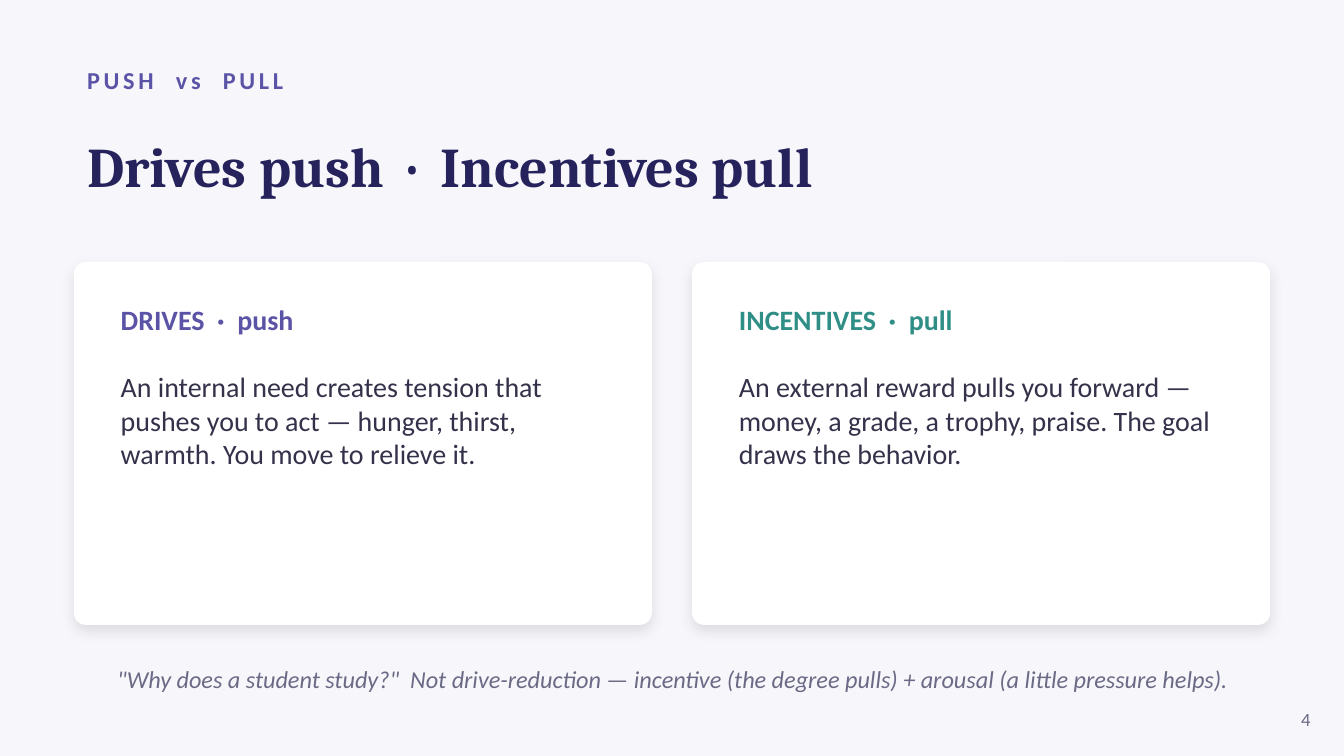
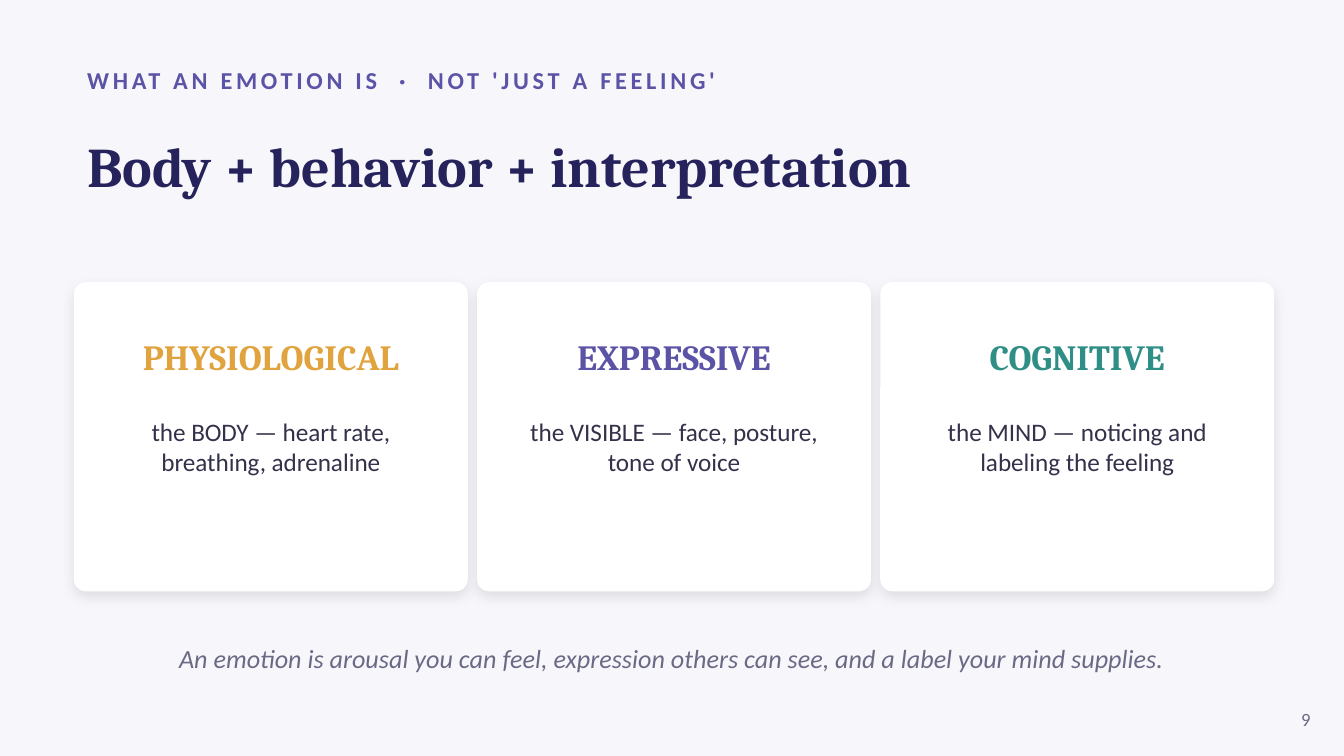
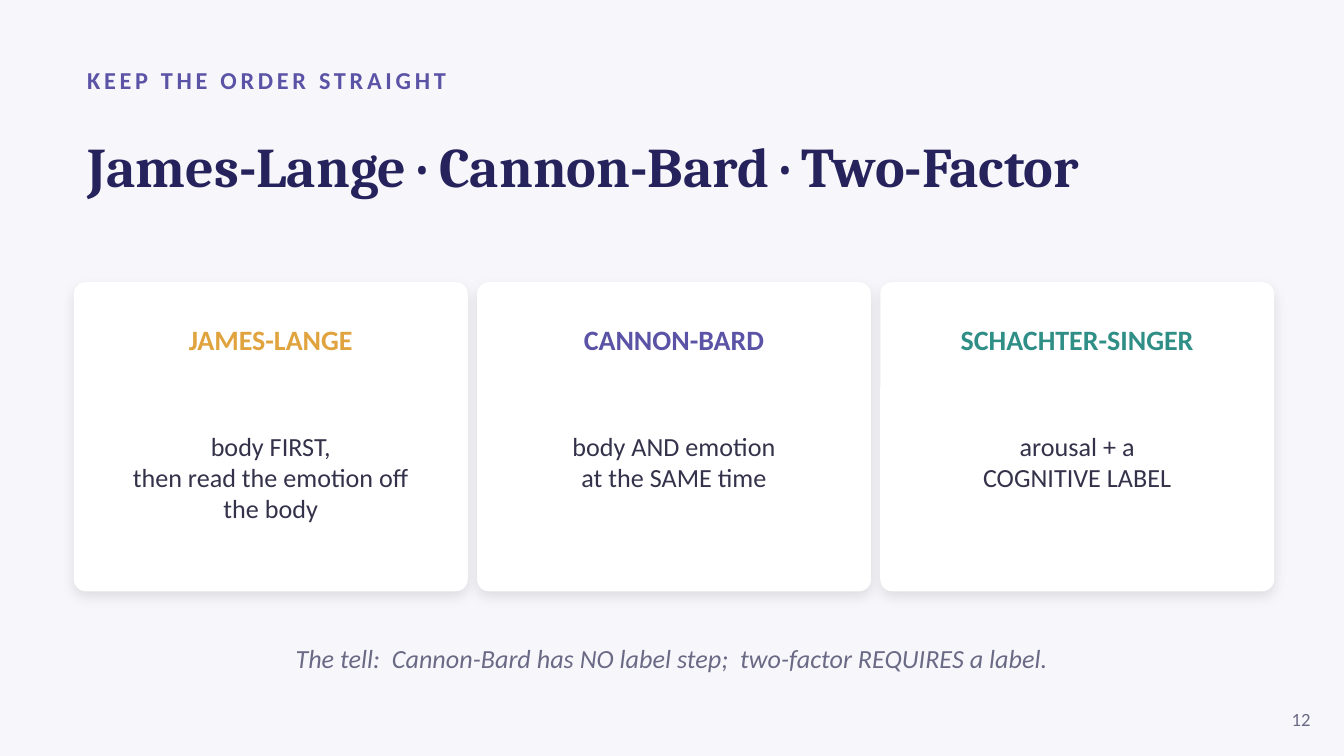
from dataclasses import dataclass

from lxml import etree
from pptx import Presentation
from pptx.dml.color import RGBColor
from pptx.enum.shapes import MSO_SHAPE
from pptx.enum.text import MSO_ANCHOR, MSO_AUTO_SIZE, PP_ALIGN
from pptx.oxml.ns import qn
from pptx.util import Pt

LEFT, CENTER, RIGHT = PP_ALIGN.LEFT, PP_ALIGN.CENTER, PP_ALIGN.RIGHT
TOP, MIDDLE = MSO_ANCHOR.TOP, MSO_ANCHOR.MIDDLE
NO_AUTOFIT = MSO_AUTO_SIZE.NONE
ROUNDED = MSO_SHAPE.ROUNDED_RECTANGLE
TITLE_ONLY = 5


@dataclass
class Style:
    size: float
    font: str = "Calibri"
    bold: bool = False
    italic: bool = False
    tracking: float = 0
    space_after: float = 0


class Theme:
    paper, white, black = "F7F7FB", "FFFFFF", "000000"
    navy, ink, muted = "26235C", "33324A", "6B6A86"
    violet, teal, amber = "5B53A6", "2F8F86", "E0A33E"
    kicker = Style(13, bold=True, tracking=2)
    title = Style(30, "Cambria", bold=True)
    spaced_heading = Style(15, bold=True, space_after=18)
    heading = Style(15, bold=True)
    serif_heading = Style(19, "Cambria", bold=True)
    large_body, body, small_body = Style(15), Style(14), Style(13.5)
    takeaway, small_takeaway = Style(14, italic=True), Style(13, italic=True)
    number = Style(10)
    margin, text_width, corner = 39.6, 640.8, 6.4


def write(box, place, lines, align=LEFT, anchor=MIDDLE):
    """Place a box and fill it with lines of (text, style, colour)."""
    box.left, box.top, box.width, box.height = [Pt(length) for length in place]
    frame = box.text_frame
    frame.word_wrap = True
    frame.auto_size = NO_AUTOFIT
    frame.vertical_anchor = anchor
    for index, (text, style, colour) in enumerate(lines):
        para = frame.add_paragraph() if index else frame.paragraphs[0]
        para.alignment = align
        para.space_after = Pt(style.space_after)
        span = para.add_run()
        span.text = text
        span.font.name = style.font
        span.font.size = Pt(style.size)
        span.font.bold = style.bold
        span.font.italic = style.italic
        span.font.color.rgb = RGBColor.from_string(colour)
        if style.tracking:
            span.font._element.set("spc", str(style.tracking * 100))


def add_card(page, left, top, width, height):
    card = page.shapes.add_shape(ROUNDED, Pt(left), Pt(top), Pt(width), Pt(height))
    card.adjustments[0] = Theme.corner / height
    card.fill.solid()
    card.fill.fore_color.rgb = RGBColor.from_string(Theme.white)
    card.line.fill.background()
    card.shadow.inherit = False
    effects = card._element.spPr.find(qn("a:effectLst"))
    shadow = etree.SubElement(effects, qn("a:outerShdw"), blurRad=str(Pt(7)),
                              dist=str(Pt(3)), dir="5400000", algn="bl", rotWithShape="0")
    colour = etree.SubElement(shadow, qn("a:srgbClr"), val=Theme.black)
    etree.SubElement(colour, qn("a:alpha"), val="10000")


# Card grids: top, width, height, step from card to card
PAIR = (140.4, 309.6, 194.4, 331.2)
TRIO = (151.2, 211, 165.6, 216)

# Text blocks in a card: side inset, top, height, alignment, anchor.
# Each card lists its lines block by block.
SLIDES = [
    {
        "kicker": "PUSH  vs  PULL",
        "title": "Drives push  ·  Incentives pull",
        "grid": PAIR,
        "blocks": [(18, 158.4, 165.6, LEFT, TOP)],
        "cards": [
            [[("DRIVES  ·  push", Theme.spaced_heading, Theme.violet),
              ("An internal need creates tension that pushes you to act — hunger, thirst, "
               "warmth. You move to relieve it.", Theme.large_body, Theme.ink)]],
            [[("INCENTIVES  ·  pull", Theme.spaced_heading, Theme.teal),
              ("An external reward pulls you forward — money, a grade, a trophy, praise. "
               "The goal draws the behavior.", Theme.large_body, Theme.ink)]],
        ],
        "takeaway": ("\"Why does a student study?\"  Not drive-reduction — incentive (the degree "
                     "pulls) + arousal (a little pressure helps).",
                     Theme.small_takeaway, Theme.muted),
        "takeaway_top": 349.2,
        "number": "4",
    },
    {
        "kicker": "WHAT AN EMOTION IS  ·  NOT 'JUST A FEELING'",
        "title": "Body + behavior + interpretation",
        "grid": TRIO,
        "blocks": [(0, 172.8, 36, CENTER, MIDDLE), (14.4, 219.6, 86.4, CENTER, TOP)],
        "cards": [
            [[("PHYSIOLOGICAL", Theme.serif_heading, Theme.amber)],
             [("the BODY — heart rate, breathing, adrenaline", Theme.small_body, Theme.ink)]],
            [[("EXPRESSIVE", Theme.serif_heading, Theme.violet)],
             [("the VISIBLE — face, posture, tone of voice", Theme.small_body, Theme.ink)]],
            [[("COGNITIVE", Theme.serif_heading, Theme.teal)],
             [("the MIND — noticing and labeling the feeling", Theme.small_body, Theme.ink)]],
        ],
        "takeaway": ("An emotion is arousal you can feel, expression others can see, and a label "
                     "your mind supplies.", Theme.takeaway, Theme.muted),
        "takeaway_top": 338.4,
        "number": "9",
    },
    {
        "kicker": "KEEP THE ORDER STRAIGHT",
        "title": "James-Lange · Cannon-Bard · Two-Factor",
        "grid": TRIO,
        "blocks": [(7.2, 169.2, 50.4, CENTER, TOP), (14.4, 226.8, 79.2, CENTER, TOP)],
        "cards": [
            [[("JAMES-LANGE", Theme.heading, Theme.amber)],
             [("body FIRST,", Theme.body, Theme.ink),
              ("then read the emotion off the body", Theme.body, Theme.ink)]],
            [[("CANNON-BARD", Theme.heading, Theme.violet)],
             [("body AND emotion", Theme.body, Theme.ink),
              ("at the SAME time", Theme.body, Theme.ink)]],
            [[("SCHACHTER-SINGER", Theme.heading, Theme.teal)],
             [("arousal + a", Theme.body, Theme.ink),
              ("COGNITIVE LABEL", Theme.body, Theme.ink)]],
        ],
        "takeaway": ("The tell:  Cannon-Bard has NO label step;  two-factor REQUIRES a label.",
                     Theme.takeaway, Theme.muted),
        "takeaway_top": 338.4,
        "number": "12",
    },
]

deck = Presentation()
deck.slide_width, deck.slide_height = Pt(720), Pt(405)
backdrop = deck.slide_master.background.fill
backdrop.solid()
backdrop.fore_color.rgb = RGBColor.from_string(Theme.paper)

for content in SLIDES:
    page = deck.slides.add_slide(deck.slide_layouts[TITLE_ONLY])
    kicker = page.shapes.add_textbox(0, 0, 0, 0)
    write(kicker, (Theme.margin, 30.24, 648, 25.2),
          [(content["kicker"], Theme.kicker, Theme.violet)])
    write(page.shapes.title, (Theme.margin, 56.16, Theme.text_width, 64.8),
          [(content["title"], Theme.title, Theme.navy)])

    card_top, card_width, card_height, step = content["grid"]
    for column, card_texts in enumerate(content["cards"]):
        card_left = Theme.margin + column * step
        add_card(page, card_left, card_top, card_width, card_height)
        for (inset, top, height, align, anchor), lines in zip(content["blocks"], card_texts):
            box = page.shapes.add_textbox(0, 0, 0, 0)
            write(box, (card_left + inset, top, card_width - 2 * inset, height),
                  lines, align, anchor)

    takeaway = page.shapes.add_textbox(0, 0, 0, 0)
    write(takeaway, (Theme.margin, content["takeaway_top"], Theme.text_width, 28.8),
          [content["takeaway"]], CENTER)
    number = page.shapes.add_textbox(0, 0, 0, 0)
    write(number, (673.2, 374.4, 36, 21.6),
          [(content["number"], Theme.number, Theme.muted)], RIGHT)

deck.save("out.pptx")
